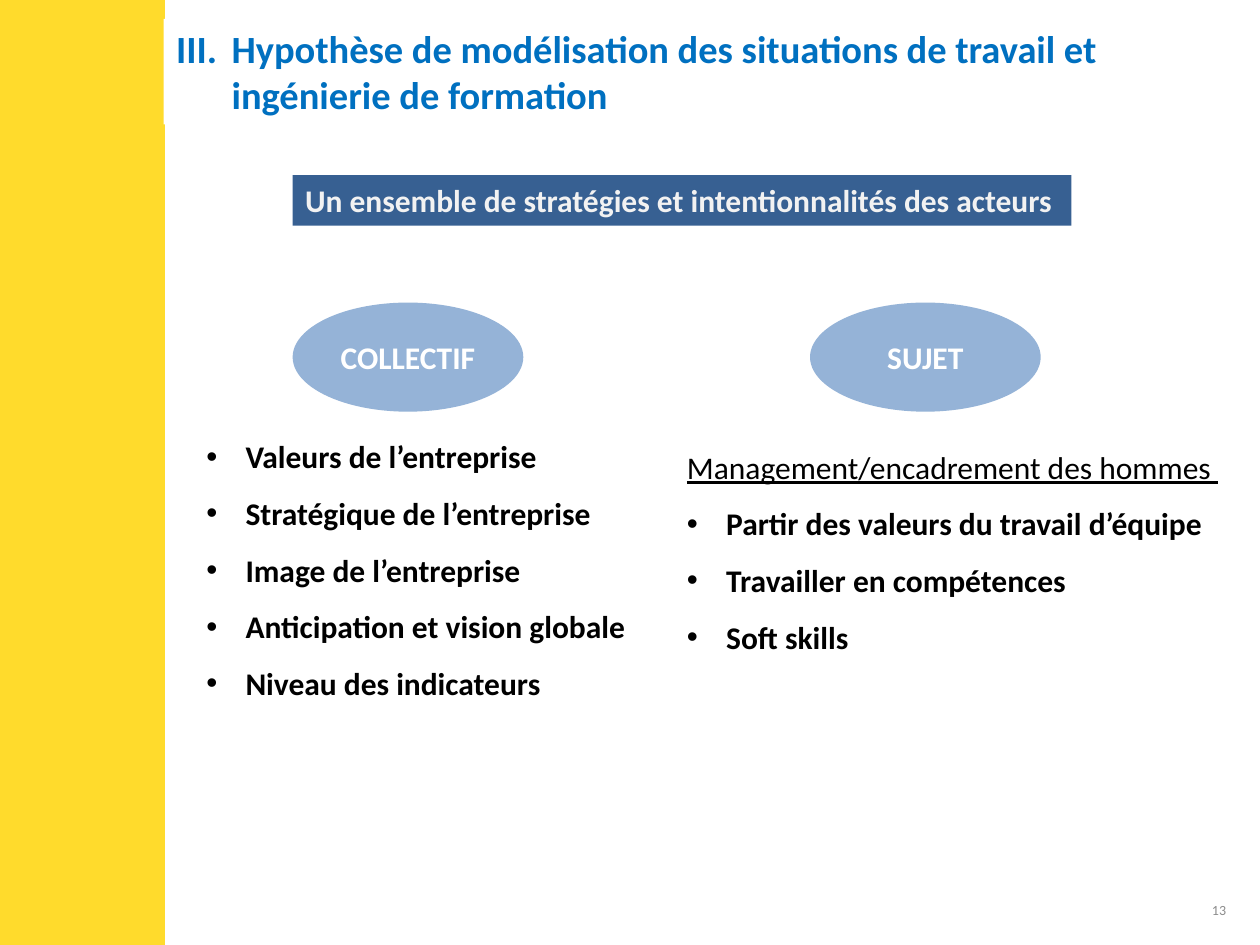
from lxml import etree
from pptx import Presentation
from pptx import util as u
from pptx.dml.color import RGBColor
from pptx.enum import shapes, text
from pptx.oxml import ns

YELLOW = RGBColor(0xFF, 0xDB, 0x2C)
WHITE = RGBColor(0xFF, 0xFF, 0xFF)
BLACK = RGBColor(0x00, 0x00, 0x00)
GREY = RGBColor(0x8C, 0x8C, 0x8C)
LIGHT_GREY = RGBColor(0xF2, 0xF2, 0xF2)
TITLE_BLUE = RGBColor(0x00, 0x70, 0xC0)
DARK_BLUE = RGBColor(0x37, 0x60, 0x92)
SOFT_BLUE = RGBColor(0x95, 0xB3, 0xD7)

BODY = {"size": u.Pt(18), "bold": True}
RECTANGLE = shapes.MSO_SHAPE.RECTANGLE
OVAL = shapes.MSO_SHAPE.OVAL


def set_attributes(target, values):
    for name, value in values.items():
        setattr(target, name, value)


def write(paragraph, words, color, font, **layout):
    set_attributes(paragraph, layout)
    run = paragraph.add_run()
    run.text = words
    set_attributes(run.font, {"name": "Calibri", **font})
    run.font.color.rgb = color


def add_marker(paragraph, indent, tag, **values):
    properties = paragraph._p.get_or_add_pPr()
    properties.set("marL", str(u.Cm(indent)))
    properties.set("indent", str(-u.Cm(indent)))
    if tag == "a:buChar":
        etree.SubElement(properties, ns.qn("a:buFont"), typeface="Arial")
    etree.SubElement(properties, ns.qn(tag), **values)


def add_block(slide, box, fill, kind=RECTANGLE):
    shape = slide.shapes.add_shape(kind, *map(u.Cm, box))
    shape.shadow.inherit = False
    shape.fill.solid()
    shape.fill.fore_color.rgb = fill
    shape.line.fill.background()
    return shape


def add_text_box(slide, box, **frame_format):
    frame = slide.shapes.add_textbox(*map(u.Cm, box)).text_frame
    set_attributes(frame, {"word_wrap": True, **frame_format})
    return frame


def add_side_band(slide, box):
    band = add_block(slide, box, YELLOW)
    band.line.color.rgb = YELLOW
    band.line.width = u.Pt(2)


def add_page_number(slide, box, number):
    frame = add_text_box(slide, box, vertical_anchor=text.MSO_ANCHOR.MIDDLE)
    write(frame.paragraphs[0], number, GREY, {"size": u.Pt(8)},
          alignment=text.PP_ALIGN.RIGHT)


def add_title(slide, box, words):
    frame = add_block(slide, box, WHITE).text_frame
    set_attributes(frame, {"word_wrap": True, "vertical_anchor": text.MSO_ANCHOR.TOP})
    paragraph = frame.paragraphs[0]
    add_marker(paragraph, 1.12, "a:buAutoNum", type="romanUcPeriod", startAt="3")
    write(paragraph, words, TITLE_BLUE, {"size": u.Pt(22), "bold": True},
          alignment=text.PP_ALIGN.LEFT)


def add_banner(slide, box, words):
    frame = add_block(slide, box, DARK_BLUE).text_frame
    set_attributes(frame, {"word_wrap": False, "vertical_anchor": text.MSO_ANCHOR.TOP})
    write(frame.paragraphs[0], words, LIGHT_GREY, BODY, alignment=text.PP_ALIGN.LEFT)


def add_actor(slide, box, name):
    frame = add_block(slide, box, SOFT_BLUE, OVAL).text_frame
    frame.vertical_anchor = text.MSO_ANCHOR.MIDDLE
    write(frame.paragraphs[0], name, WHITE, BODY, alignment=text.PP_ALIGN.CENTER)


def add_points(slide, box, points, heading=None):
    frame = add_text_box(slide, box)
    paragraph = frame.paragraphs[0]
    if heading:
        write(paragraph, heading, BLACK, {"size": u.Pt(18), "underline": True})
    for index, point in enumerate(points):
        if index or heading:
            paragraph = frame.add_paragraph()
        add_marker(paragraph, 0.79, "a:buChar", char="•")
        write(paragraph, point, BLACK, BODY, line_spacing=1.5)


def main():
    presentation = Presentation()
    presentation.slide_width = u.Cm(25.4)
    presentation.slide_height = u.Cm(19.05)
    slide = presentation.slides.add_slide(presentation.slide_layouts[6])

    add_side_band(slide, (0, 0, 3.3, 19.05))
    add_page_number(slide, (22.94, 17.83, 2.03, 1.02), "13")
    add_title(slide, (3.3, 0.38, 19.81, 2.13),
              "Hypothèse de modélisation des situations de travail et ingénierie de formation")
    add_banner(slide, (5.9, 3.53, 15.7, 1.02),
               "Un ensemble de stratégies et intentionnalités des acteurs")
    for left, name in ((5.9, "COLLECTIF"), (16.33, "SUJET")):
        add_actor(slide, (left, 6.1, 4.65, 2.2), name)
    add_points(slide, (3.91, 8.31, 9.4, 6.02), (
        "Valeurs de l’entreprise",
        "Stratégique de l’entreprise",
        "Image de l’entreprise",
        "Anticipation et vision globale",
        "Niveau des indicateurs",
    ))
    add_points(slide, (13.6, 8.9, 11.5, 4.5), (
        "Partir des valeurs du travail d’équipe",
        "Travailler en compétences",
        "Soft skills",
    ), heading="Management/encadrement des hommes ")

    presentation.save("out.pptx")


if __name__ == "__main__":
    main()
